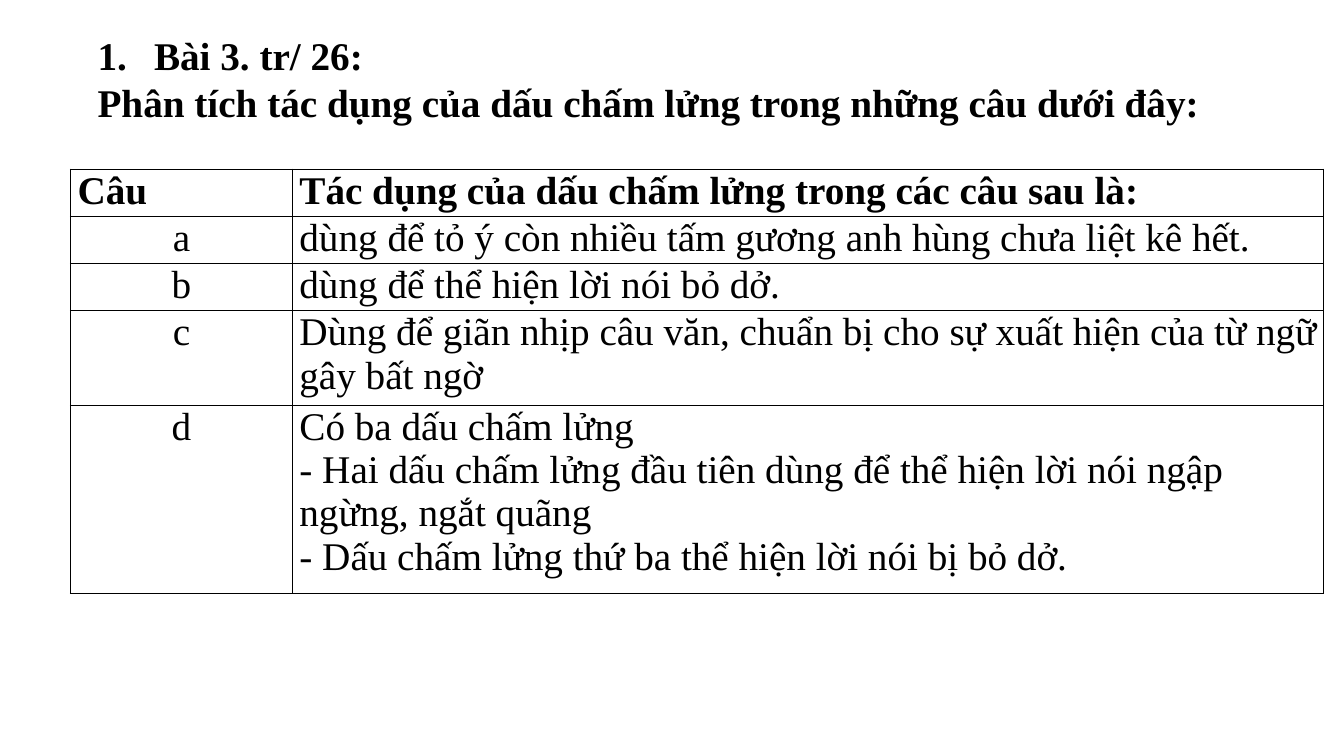
"""Build the slide on the uses of the ellipsis in Vietnamese sentences."""
from dataclasses import dataclass

from lxml import etree
from pptx import Presentation
from pptx import util as u
from pptx.dml.color import RGBColor
from pptx.enum import text
from pptx.oxml import ns

BLACK = RGBColor(0x00, 0x00, 0x00)
WHITE = RGBColor(0xFF, 0xFF, 0xFF)
FONT = "Times New Roman"
LINE_HEIGHT = 0.468
COLUMN_WIDTHS = (2.2, 10.23)
BORDERS = ("a:lnL", "a:lnR", "a:lnT", "a:lnB")


@dataclass(frozen=True)
class AnswerRow:
    label: str
    answers: tuple[str, ...]
    lines: int = 1
    header: bool = False


ROWS = (
    AnswerRow("Câu", ("Tác dụng của dấu chấm lửng trong các câu sau là:",), header=True),
    AnswerRow("a", ("dùng để tỏ ý còn nhiều tấm gương anh hùng chưa liệt kê hết.",)),
    AnswerRow("b", ("dùng để thể hiện lời nói bỏ dở.",)),
    AnswerRow("c", ("Dùng để giãn nhịp câu văn, chuẩn bị cho sự xuất hiện của từ ngữ gây bất ngờ",), lines=2),
    AnswerRow("d", (
        "Có ba dấu chấm lửng",
        "- Hai dấu chấm lửng đầu tiên dùng để thể hiện lời nói ngập ngừng, ngắt quãng",
        "- Dấu chấm lửng thứ ba thể hiện lời nói bị bỏ dở.",
    ), lines=4),
)


def write_text(frame, lines: tuple[str, ...], *, size: float = 28, bold: bool = False,
               align=text.PP_ALIGN.LEFT) -> None:
    """Write one formatted paragraph per line into a text frame."""
    for index, line in enumerate(lines):
        paragraph = frame.add_paragraph() if index else frame.paragraphs[0]
        paragraph.alignment = align
        run = paragraph.add_run()
        run.text = line
        run.font.name = FONT
        run.font.size = u.Pt(size)
        run.font.bold = bold
        run.font.color.rgb = BLACK


def number_paragraph(paragraph, indent: float) -> None:
    """Give a paragraph an automatic number with a hanging indent."""
    properties = paragraph._p.get_or_add_pPr()
    properties.set("marL", str(u.Inches(indent)))
    properties.set("indent", str(-u.Inches(indent)))
    etree.SubElement(properties, ns.qn("a:buFont"), typeface="+mj-lt")
    etree.SubElement(properties, ns.qn("a:buAutoNum"), type="arabicPeriod")


def style_cell(cell) -> None:
    """Set the margins, black borders and white fill of a cell."""
    cell.margin_left = cell.margin_right = u.Inches(0.07)
    cell.margin_top = cell.margin_bottom = 0
    properties = cell._tc.get_or_add_tcPr()
    for border in BORDERS:
        line = etree.SubElement(properties, ns.qn(border), w=str(u.Pt(1)))
        fill = etree.SubElement(line, ns.qn("a:solidFill"))
        etree.SubElement(fill, ns.qn("a:srgbClr"), val=str(BLACK))
    cell.fill.solid()
    cell.fill.fore_color.rgb = WHITE


def add_heading(slide) -> None:
    """Add the numbered exercise title and its instruction."""
    box = slide.shapes.add_textbox(u.Inches(0.87), u.Inches(0.26), u.Inches(12.1), u.Inches(1.04))
    frame = box.text_frame
    frame.word_wrap = True
    frame.auto_size = text.MSO_AUTO_SIZE.SHAPE_TO_FIT_TEXT
    write_text(frame, (
        "Bài 3. tr/ 26:",
        "Phân tích tác dụng của dấu chấm lửng trong những câu dưới đây:",
    ), bold=True)
    number_paragraph(frame.paragraphs[0], 0.56)


def add_answer_table(slide) -> None:
    """Add the table of sentences and the uses of their ellipses."""
    height = LINE_HEIGHT * sum(row.lines for row in ROWS)
    table = slide.shapes.add_table(
        len(ROWS), len(COLUMN_WIDTHS), u.Inches(0.7), u.Inches(1.68),
        u.Inches(sum(COLUMN_WIDTHS)), u.Inches(height)).table
    for column, width in zip(table.columns, COLUMN_WIDTHS):
        column.width = u.Inches(width)
    for index, row in enumerate(ROWS):
        table.rows[index].height = u.Inches(LINE_HEIGHT * row.lines)
        label, answer = table.cell(index, 0), table.cell(index, 1)
        label_align = text.PP_ALIGN.LEFT if row.header else text.PP_ALIGN.CENTER
        write_text(label.text_frame, (row.label,), bold=row.header, align=label_align)
        write_text(answer.text_frame, row.answers, bold=row.header)
        style_cell(label)
        style_cell(answer)


def main() -> None:
    """Create and save the presentation."""
    presentation = Presentation()
    presentation.slide_width = u.Inches(13.33)
    presentation.slide_height = u.Inches(7.5)
    slide = presentation.slides.add_slide(presentation.slide_layouts[6])
    add_heading(slide)
    add_answer_table(slide)
    presentation.save("out.pptx")


if __name__ == "__main__":
    main()
